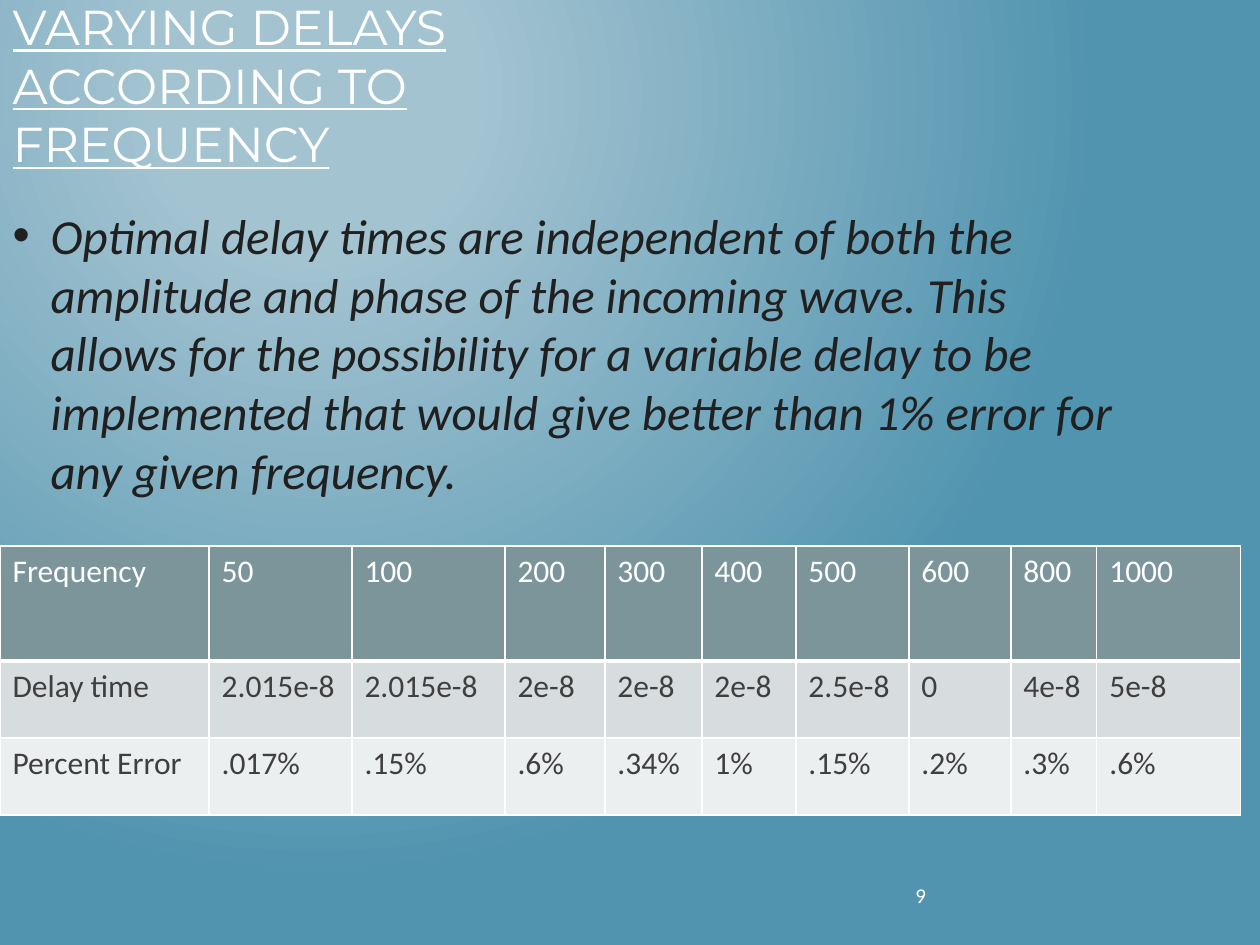
from dataclasses import dataclass

from lxml import etree
from pptx import Presentation
from pptx import util as u
from pptx.dml.color import RGBColor
from pptx.enum import text
from pptx.oxml.ns import qn

EMU_PER_PX = 914400 / 126


@dataclass(frozen=True)
class Theme:
    glow: str = "A3C3D1"
    back: str = "5194AF"
    white: str = "FFFFFF"
    body: str = "202020"
    cell: str = "3F3F3F"
    title_font: str = "Montserrat"
    font: str = "Calibri"
    large: int = 28
    table: int = 18
    small: int = 12


@dataclass(frozen=True)
class Box:
    left: int
    top: int
    width: int
    height: int


@dataclass(frozen=True)
class Row:
    height: int
    fill: str
    color: str
    bottom: int  # border width in points
    values: tuple[str, ...]


THEME = Theme()
COLUMNS = (209, 143, 153, 100, 97, 94, 113, 102, 86, 144)
ROWS = (
    Row(115, "7C959A", THEME.white, 3,
        ("Frequency", "50", "100", "200", "300", "400", "500", "600", "800", "1000")),
    Row(77, "D7DDDE", THEME.cell, 1,
        ("Delay time", "2.015e-8", "2.015e-8", "2e-8", "2e-8", "2e-8", "2.5e-8", "0",
         "4e-8", "5e-8")),
    Row(77, "ECEFEF", THEME.cell, 1,
        ("Percent Error", ".017%", ".15%", ".6%", ".34%", "1%", ".15%", ".2%", ".3%", ".6%")),
)


def px(n: int) -> u.Emu:
    return u.Emu(round(n * EMU_PER_PX))


def place(sp, box: Box) -> None:
    sp.left, sp.top = px(box.left), px(box.top)
    sp.width, sp.height = px(box.width), px(box.height)


def style(p, size: int, color: str, name: str = THEME.font) -> None:
    p.alignment = text.PP_ALIGN.LEFT
    p.font.name, p.font.size = name, u.Pt(size)
    p.font.color.rgb = RGBColor.from_string(color)


def write(sp, words: str, size: int, color: str, name: str = THEME.font):
    tf = sp.text_frame
    tf.text = words
    tf.word_wrap = True
    tf.auto_size = text.MSO_AUTO_SIZE.NONE
    tf.vertical_anchor = text.MSO_ANCHOR.TOP
    p = tf.paragraphs[0]
    style(p, size, color, name)
    return p


def paint_background(s) -> None:
    fill = s.background.fill
    fill.gradient()
    for stop, position, color in zip(fill.gradient_stops, (0.2, 1), (THEME.glow, THEME.back)):
        stop.position = position
        stop.color.rgb = RGBColor.from_string(color)
    # Turn the linear gradient into a circular one
    grad = s._element.find(".//" + qn("a:gradFill"))
    circle = etree.Element(qn("a:path"), path="circle")
    etree.SubElement(circle, qn("a:fillToRect"), l="50000", t="20000", r="100000", b="100000")
    grad.replace(grad.find(qn("a:lin")), circle)


def add_border(cell, side: str, points: int) -> None:
    line = etree.SubElement(cell._tc.get_or_add_tcPr(), qn(f"a:ln{side}"), w=str(u.Pt(points)))
    fill = etree.SubElement(line, qn("a:solidFill"))
    etree.SubElement(fill, qn("a:srgbClr"), val=THEME.white)


def add_delay_table(s, left: int, top: int) -> None:
    height = sum(row.height for row in ROWS)
    table = s.shapes.add_table(len(ROWS), len(COLUMNS), px(left), px(top),
                               px(sum(COLUMNS)), px(height)).table
    for column, width in zip(table.columns, COLUMNS):
        column.width = px(width)
    for i, row in enumerate(ROWS):
        table.rows[i].height = px(row.height)
        for j, value in enumerate(row.values):
            cell = table.cell(i, j)
            for side in "LRT":
                add_border(cell, side, 1)
            add_border(cell, "B", row.bottom)
            cell.fill.solid()
            cell.fill.fore_color.rgb = RGBColor.from_string(row.fill)
            cell.text = value
            p = cell.text_frame.paragraphs[0]
            style(p, THEME.table, row.color)
            p.font.bold = False


def main() -> None:
    prs = Presentation()
    prs.slide_width, prs.slide_height = u.Inches(10), u.Inches(7.5)
    s = prs.slides.add_slide(prs.slide_layouts[1])
    paint_background(s)

    # Title
    title = s.shapes.title
    place(title, Box(0, -10, 525, 272))
    p = write(title, "VARYING DELAYS ACCORDING TO FREQUENCY", THEME.large, THEME.white,
              THEME.title_font)
    p.font.underline = True

    # Bulleted finding
    body = s.placeholders[1]
    place(body, Box(0, 199, 1134, 224))
    p = write(body, "Optimal delay times are independent of both the amplitude and phase of the "
              "incoming wave. This allows for the possibility for a variable delay to be "
              "implemented that would give better than 1% error for any given frequency.",
              THEME.large, THEME.body)
    p.font.italic = True
    pPr = p._p.get_or_add_pPr()
    pPr.set("marL", str(px(38)))
    pPr.set("indent", str(px(-38)))

    # Results
    add_delay_table(s, 0, 546)

    # Page number
    number = s.shapes.add_textbox(px(903), px(876), px(294), px(50))
    write(number, "9", THEME.small, THEME.white)

    prs.save("out.pptx")


if __name__ == "__main__":
    main()
